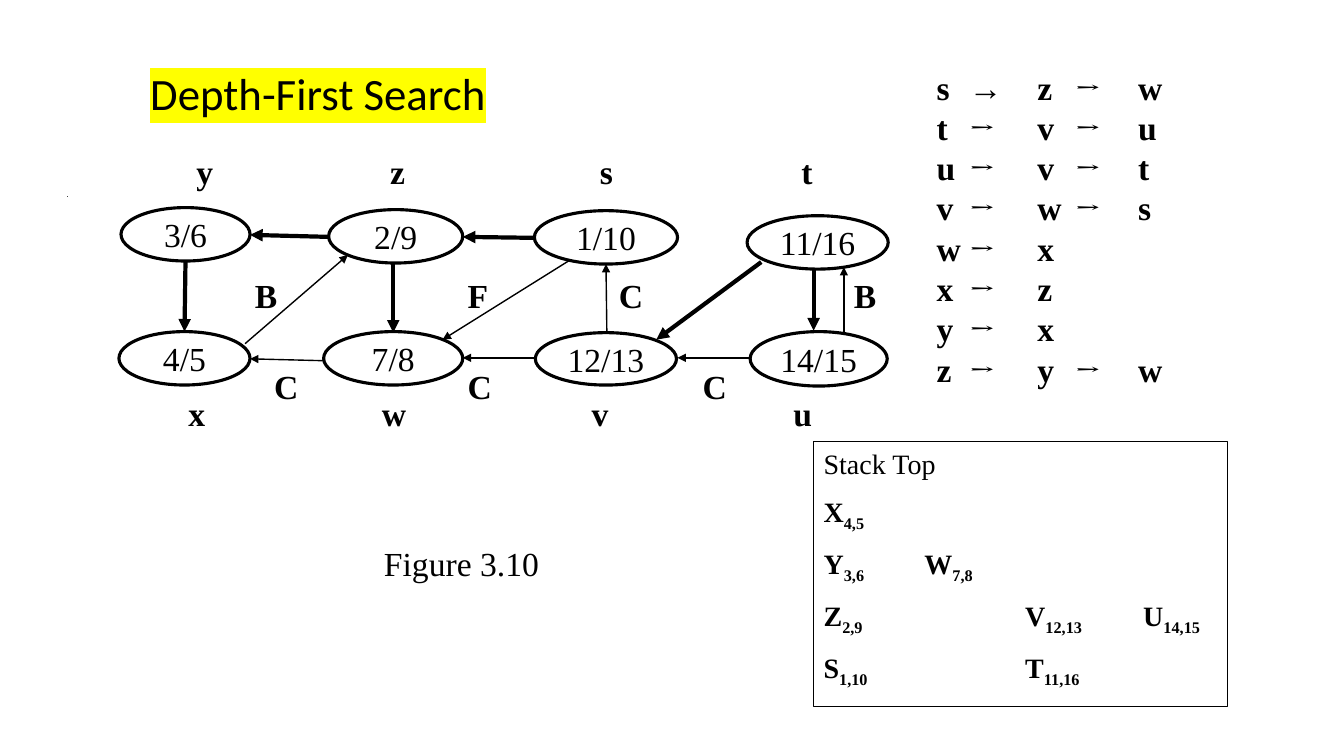
"""Build the depth-first search slide: graph, adjacency list and stack history."""
from dataclasses import dataclass
from typing import Optional

import lxml.etree
import pptx
import pptx.dml.color
import pptx.enum.shapes
import pptx.enum.text
import pptx.oxml.ns
import pptx.util

PX = 9144
COLORS = {"ink": "000000", "paper": "FFFFFF", "marker": "FFFF00", "dot": "5B9BD5"}
SERIF, ARROW_FONT, TITLE_FONT = "Times New Roman", "Cambria", "Calibri"
ANCHOR = pptx.enum.text.MSO_ANCHOR
SHAPE = pptx.enum.shapes.MSO_SHAPE
qn = pptx.oxml.ns.qn


@dataclass(frozen=True)
class Box:
    left: int
    top: int
    width: int
    height: int


@dataclass(frozen=True)
class Vertex:
    times: str
    box: Box


@dataclass(frozen=True)
class Edge:
    start: tuple[int, int]
    end: tuple[int, int]
    weight: float = 1


@dataclass(frozen=True)
class LabelRow:
    labels: str
    box: Box
    stops: tuple[int, ...]


@dataclass(frozen=True)
class Adjacency:
    vertex: str
    neighbours: str
    first_arrow_font: str = ARROW_FONT


@dataclass(frozen=True)
class StackEntry:
    vertex: str
    times: str


VERTICES = (
    Vertex("3/6", Box(120, 206, 128, 53)),
    Vertex("2/9", Box(326, 208, 133, 53)),
    Vertex("1/10", Box(530, 209, 142, 53)),
    Vertex("11/16", Box(741, 214, 140, 53)),
    Vertex("4/5", Box(118, 329, 130, 53)),
    Vertex("7/8", Box(321, 329, 138, 53)),
    Vertex("12/13", Box(531, 330, 140, 52)),
    Vertex("14/15", Box(744, 329, 136, 54)),
)
EDGES = (
    Edge((326, 235), (248, 233), 3),
    Edge((243, 341), (345, 253)),
    Edge((532, 236), (459, 235), 3),
    Edge((583, 247), (439, 337)),
    Edge((327, 358), (248, 356)),
    Edge((531, 355), (459, 355)),
    Edge((602, 336), (601, 262)),
    Edge((755, 260), (651, 337), 3),
    Edge((807, 248), (807, 328), 3),
    Edge((837, 346), (837, 265)),
    Edge((744, 355), (672, 355)),
    Edge((184, 259), (183, 329), 3),
    Edge((390, 257), (390, 330), 3),
)
VERTEX_STOPS = (100, 292, 500, 700)
LABEL_ROWS = (
    LabelRow("yzst", Box(85, 145, 785, 50), VERTEX_STOPS),
    LabelRow("xwvu", Box(77, 385, 785, 50), VERTEX_STOPS),
    LabelRow("BFCB", Box(138, 268, 785, 50), (105, 316, 466, 699)),
    LabelRow("CCC", Box(162, 358, 785, 50), (100, 292, 525)),
)
ADJACENCIES = (
    Adjacency("s", "zw", SERIF),
    Adjacency("t", "vu"),
    Adjacency("u", "vt"),
    Adjacency("v", "ws"),
    Adjacency("w", "x"),
    Adjacency("x", "z"),
    Adjacency("y", "x"),
    Adjacency("z", "yw"),
)
ADJACENCY_STOPS = (32, 100, 137, 200)
STACK_ROWS: tuple[tuple[Optional[StackEntry], ...], ...] = (
    (StackEntry("X", "4,5"),),
    (StackEntry("Y", "3,6"), StackEntry("W", "7,8")),
    (StackEntry("Z", "2,9"), None, StackEntry("V", "12,13"), StackEntry("U", "14,15")),
    (StackEntry("S", "1,10"), None, StackEntry("T", "11,16")),
)
STACK_STOPS = (100, 200, 317)


def rgb(name: str) -> pptx.dml.color.RGBColor:
    return pptx.dml.color.RGBColor.from_string(COLORS[name])


def place(shape, box: Box) -> None:
    shape.left, shape.top = box.left * PX, box.top * PX
    shape.width, shape.height = box.width * PX, box.height * PX


def start_paragraph(frame, stops: tuple[int, ...] = (), space_after: int = 0):
    first = frame.paragraphs[0]
    paragraph = frame.add_paragraph() if first.runs else first
    paragraph.alignment = pptx.enum.text.PP_ALIGN.LEFT
    paragraph.space_before = pptx.util.Pt(0)
    paragraph.space_after = pptx.util.Pt(space_after)
    if stops:
        tab_list = lxml.etree.SubElement(paragraph._p.get_or_add_pPr(), qn("a:tabLst"))
        for stop in stops:
            lxml.etree.SubElement(tab_list, qn("a:tab"), pos=str(stop * PX), algn="l")
    return paragraph


def add_run(paragraph, text: str, size: int = 24, bold: bool = False, font: str = SERIF):
    run = paragraph.add_run()
    run.text = text
    run.font.name, run.font.size, run.font.bold = font, pptx.util.Pt(size), bold
    run.font.color.rgb = rgb("ink")
    return run


def add_shape(slide, kind, box: Box, fill: str, weight: float):
    shape = slide.shapes.add_shape(kind, 0, 0, 0, 0)
    place(shape, box)
    shape.shadow.inherit = False
    shape.fill.solid()
    shape.fill.fore_color.rgb = rgb(fill)
    shape.line.color.rgb = rgb("ink")
    shape.line.width = pptx.util.Pt(weight)
    return shape


def add_text_box(slide, box: Box, anchor=ANCHOR.TOP):
    text_box = slide.shapes.add_textbox(0, 0, 0, 0)
    place(text_box, box)
    text_box.text_frame.word_wrap = True
    text_box.text_frame.vertical_anchor = anchor
    return text_box.text_frame


def draw_edge(slide, edge: Edge) -> None:
    points = [value * PX for value in (*edge.start, *edge.end)]
    connector = slide.shapes.add_connector(pptx.enum.shapes.MSO_CONNECTOR.STRAIGHT, *points)
    connector.line.color.rgb = rgb("ink")
    connector.line.width = pptx.util.Pt(edge.weight)
    properties = connector.element.spPr
    lxml.etree.SubElement(properties.find(qn("a:ln")), qn("a:tailEnd"), type="triangle")
    lxml.etree.SubElement(properties, qn("a:effectLst"))


def draw_vertex(slide, vertex: Vertex) -> None:
    frame = add_shape(slide, SHAPE.OVAL, vertex.box, "paper", 2.25).text_frame
    frame.word_wrap = False
    frame.vertical_anchor = ANCHOR.MIDDLE
    paragraph = start_paragraph(frame)
    paragraph.alignment = pptx.enum.text.PP_ALIGN.CENTER
    add_run(paragraph, vertex.times)


def draw_label_row(slide, row: LabelRow) -> None:
    paragraph = start_paragraph(add_text_box(slide, row.box, ANCHOR.MIDDLE), row.stops)
    for label in row.labels:
        add_run(paragraph, f"\t{label}", bold=True)


def fill_title(title) -> None:
    place(title, Box(139, 34, 356, 83))
    frame = title.text_frame
    frame.word_wrap = False
    frame.auto_size = pptx.enum.text.MSO_AUTO_SIZE.NONE
    frame.vertical_anchor = ANCHOR.TOP
    paragraph = start_paragraph(frame)
    paragraph.line_spacing = 1.5
    properties = add_run(paragraph, "Depth-First Search", 32, font=TITLE_FONT).font._element
    highlight = lxml.etree.Element(qn("a:highlight"))
    lxml.etree.SubElement(highlight, qn("a:srgbClr"), val=COLORS["marker"])
    properties.find(qn("a:solidFill")).addnext(highlight)


def draw_adjacencies(slide) -> None:
    frame = add_text_box(slide, Box(919, 61, 291, 333))
    for adjacency in ADJACENCIES:
        paragraph = start_paragraph(frame, ADJACENCY_STOPS)
        add_run(paragraph, adjacency.vertex, bold=True)
        arrow_font = adjacency.first_arrow_font
        for neighbour in adjacency.neighbours:
            add_run(paragraph, "\t→", bold=True, font=arrow_font)
            add_run(paragraph, f"\t{neighbour}", bold=True)
            arrow_font = ARROW_FONT


def draw_stack(slide) -> None:
    frame = add_shape(slide, SHAPE.RECTANGLE, Box(807, 438, 410, 263), "paper", 0.5).text_frame
    frame.vertical_anchor = ANCHOR.TOP
    add_run(start_paragraph(frame, space_after=10), "Stack Top", 20)
    for entries in STACK_ROWS:
        paragraph = start_paragraph(frame, STACK_STOPS, 10)
        for column, entry in enumerate(entries):
            tab = "\t" if column else ""
            add_run(paragraph, tab + (entry.vertex if entry else ""), 20, True)
            if entry:
                times = add_run(paragraph, entry.times, 20, True)
                times.font._element.set("baseline", "-25000")


def main() -> None:
    presentation = pptx.Presentation()
    presentation.slide_width, presentation.slide_height = 1333 * PX, 750 * PX
    slide = presentation.slides.add_slide(presentation.slide_layouts[5])
    fill_title(slide.shapes.title)
    for edge in EDGES:
        draw_edge(slide, edge)
    add_shape(slide, SHAPE.RECTANGLE, Box(67, 195, 0, 0), "dot", 0.75)
    for vertex in VERTICES:
        draw_vertex(slide, vertex)
    for row in LABEL_ROWS:
        draw_label_row(slide, row)
    draw_adjacencies(slide)
    draw_stack(slide)
    add_run(start_paragraph(add_text_box(slide, Box(371, 534, 175, 52))), "Figure 3.10")
    presentation.save("out.pptx")


if __name__ == "__main__":
    main()
